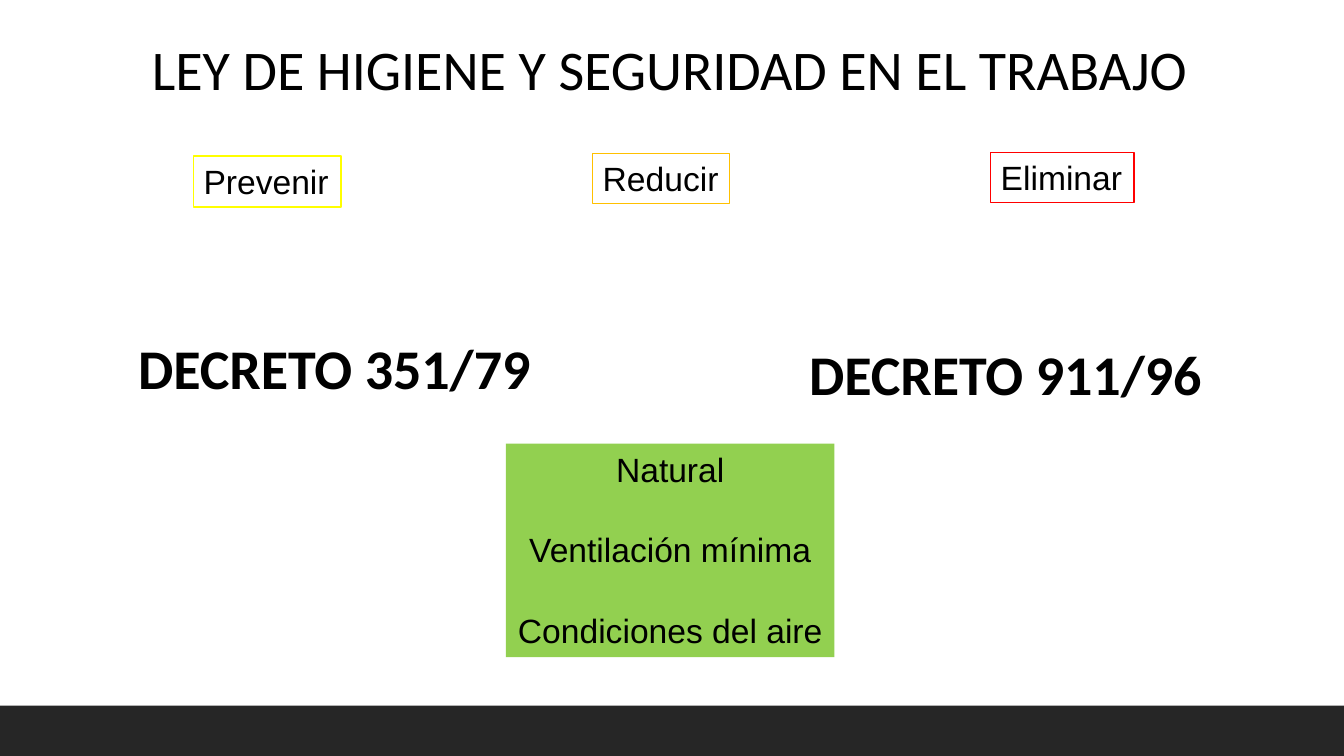
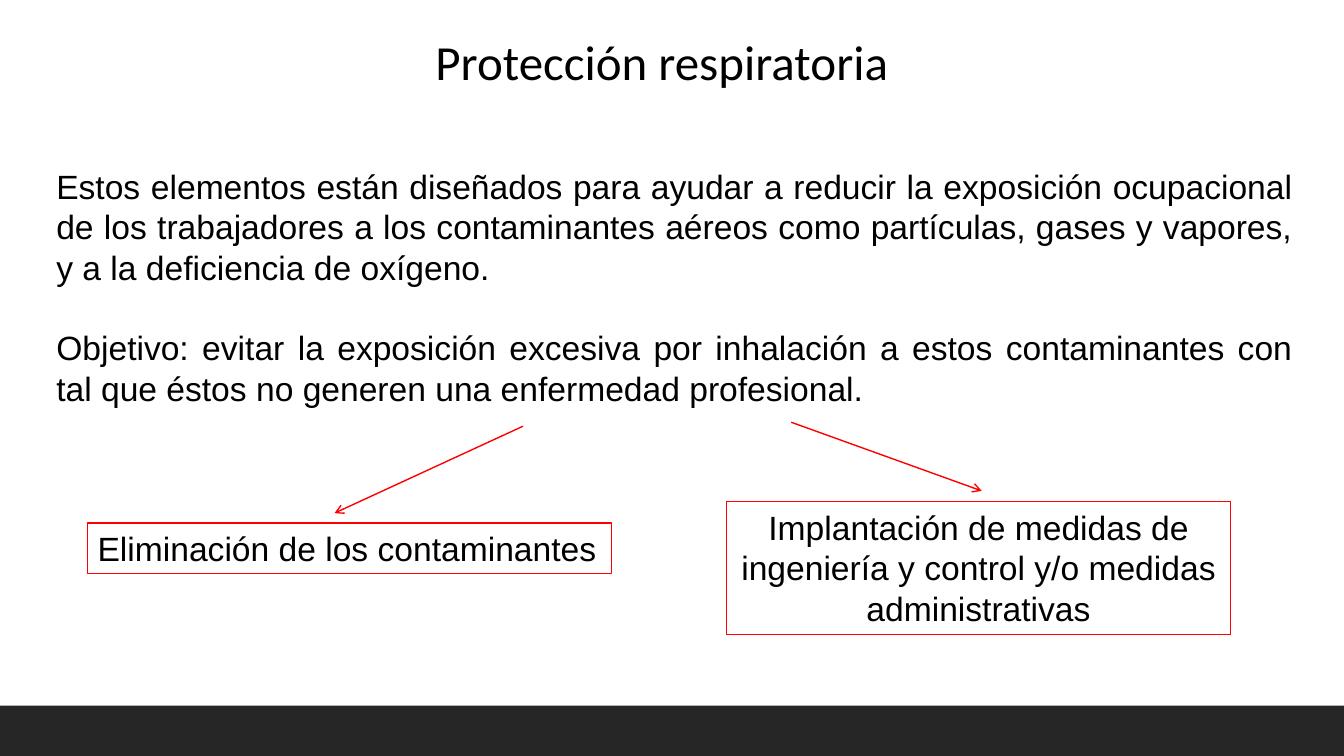
"""Build two slides on workplace hygiene law and respiratory protection."""
from pptx import Presentation, util as u
from pptx.dml.color import RGBColor
from pptx.enum import shapes, text
from pptx.oxml.ns import qn
from lxml import etree

HUES = {"ink": "000000", "band": "262626", "paper": "FFFFFF", "yellow": "FFFF00",
        "amber": "FFC000", "red": "FF0000", "green": "92D050"}
WIDE, HIGH, BAND = 33.87, 19.05, 1.27
LEFT, MID, JUST = text.PP_ALIGN.LEFT, text.PP_ALIGN.CENTER, text.PP_ALIGN.JUSTIFY
HEAD = {"size": 40, "face": "Calibri", "bold": True}

SLIDES = [
    {"title": ("LEY DE HIGIENE Y SEGURIDAD EN EL TRABAJO", (1.3, 0.74, 31.14, 1.96), 40, MID),
     "boxes": [
         (["DECRETO 351/79"], (3.23, 8.28, 10.52, 1.96), HEAD),
         (["DECRETO 911/96"], (20.14, 8.43, 10.52, 1.96), HEAD),
         (["Prevenir"], (4.88, 3.94, 3.71, 1.27),
          {"fill": "paper", "line": "yellow", "width": 1.25}),
         (["Reducir"], (14.94, 3.86, 3.45, 1.27), {"line": "amber"}),
         (["Eliminar"], (24.97, 3.84, 3.61, 1.27), {"line": "red"}),
         (["Natural", "Ventilación mínima", "Condiciones del aire"],
          (12.75, 11.18, 8.28, 5.38), {"fill": "green", "align": MID}),
     ],
     "arrows": []},
    {"title": ("Protección respiratoria", (10.72, 0.66, 12.32, 1.75), 35, LEFT),
     "boxes": [
         (["Estos elementos están diseñados para ayudar a reducir la exposición "
           "ocupacional de los trabajadores a los contaminantes aéreos como "
           "partículas, gases y vapores, y a la deficiencia de oxígeno.",
           "Objetivo: evitar la exposición excesiva por inhalación a estos "
           "contaminantes con tal que éstos no generen una enfermedad profesional."],
          (1.17, 4.06, 31.65, 6.4), {"align": JUST, "wrap": True}),
         (["Eliminación de los contaminantes"], (2.21, 13.18, 13.21, 1.27), {"line": "red"}),
         (["Implantación de medidas de ingeniería y control y/o medidas administrativas"],
          (18.31, 12.65, 12.7, 3.33), {"line": "red", "align": MID, "wrap": True}),
     ],
     "arrows": [(13.18, 10.74, 8.43, 12.93), (19.94, 10.64, 24.74, 12.37)]},
]


def hue(name):
    return RGBColor.from_string(HUES[name])


def cms(vals):
    return [u.Cm(val) for val in vals]


def paint(shape, name):
    shape.fill.solid()
    shape.fill.fore_color.rgb = hue(name)


def style(para, size, face, align, bold=False):
    para.alignment = align
    font = para.font
    font.size, font.name, font.bold = u.Pt(size), face, bold
    font.color.rgb = hue("ink")


def add_band(slide):
    band = slide.shapes.add_shape(shapes.MSO_SHAPE.RECTANGLE,
                                  *cms((0, HIGH - BAND, WIDE, BAND)))
    band.shadow.inherit = False
    paint(band, "band")
    band.line.fill.background()


def set_title(slide, words, area, size, align):
    title = slide.shapes.title
    title.left, title.top, title.width, title.height = cms(area)
    frame = title.text_frame
    frame.text = words
    frame.auto_size = text.MSO_AUTO_SIZE.NONE
    frame.vertical_anchor = text.MSO_ANCHOR.TOP
    style(frame.paragraphs[0], size, "Calibri", align)


def add_box(slide, lines, area, look):
    box = slide.shapes.add_textbox(*cms(area))
    if "fill" in look:
        paint(box, look["fill"])
    if "line" in look:
        box.line.color.rgb = hue(look["line"])
        box.line.width = u.Pt(look.get("width", 0.75))
    frame = box.text_frame
    frame.word_wrap = look.get("wrap", False)
    for num, words in enumerate(lines):
        para = frame.add_paragraph() if num else frame.paragraphs[0]
        para.text = words
        if num:
            para.space_before = u.Pt(28.8)
        style(para, look.get("size", 24), look.get("face", "Arial"),
              look.get("align", LEFT), look.get("bold", False))


def add_arrow(slide, ends):
    arrow = slide.shapes.add_connector(shapes.MSO_CONNECTOR.STRAIGHT, *cms(ends))
    arrow.line.color.rgb = hue("red")
    arrow.line.width = u.Pt(1)
    props = arrow.line.fill and arrow.element.spPr
    etree.SubElement(props.find(qn("a:ln")), qn("a:tailEnd"), type="arrow")
    etree.SubElement(props, qn("a:effectLst"))


def main():
    deck = Presentation()
    deck.slide_width, deck.slide_height = cms((WIDE, HIGH))
    for page in SLIDES:
        slide = deck.slides.add_slide(deck.slide_layouts[5])
        add_band(slide)
        set_title(slide, *page["title"])
        for box in page["boxes"]:
            add_box(slide, *box)
        for ends in page["arrows"]:
            add_arrow(slide, ends)
    deck.save("out.pptx")


if __name__ == "__main__":
    main()
